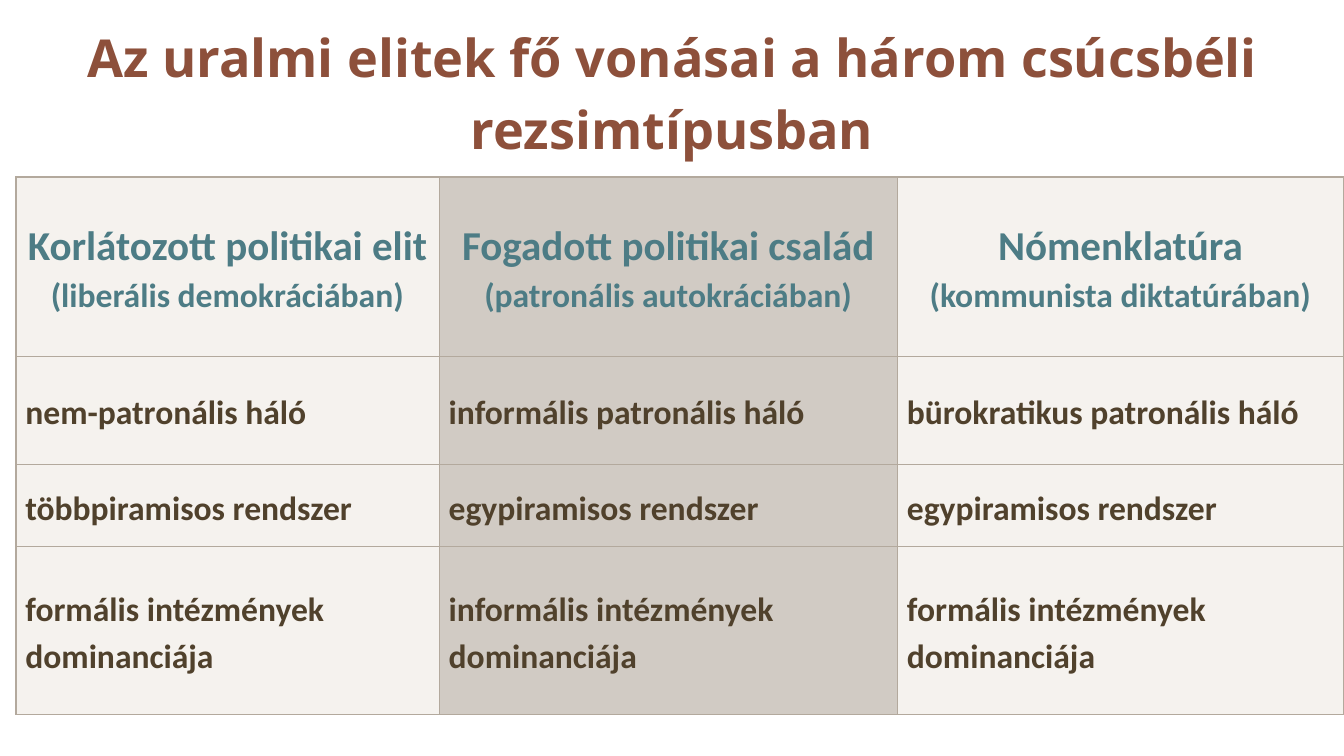
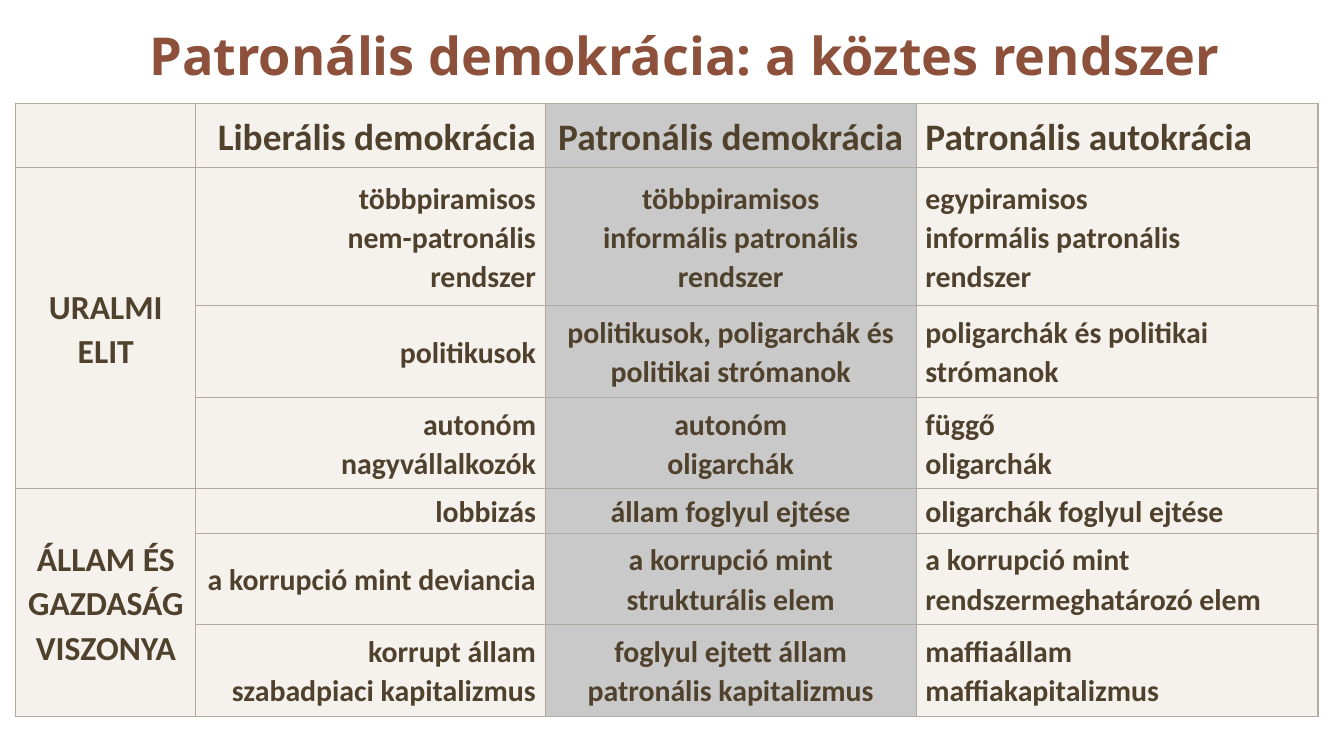
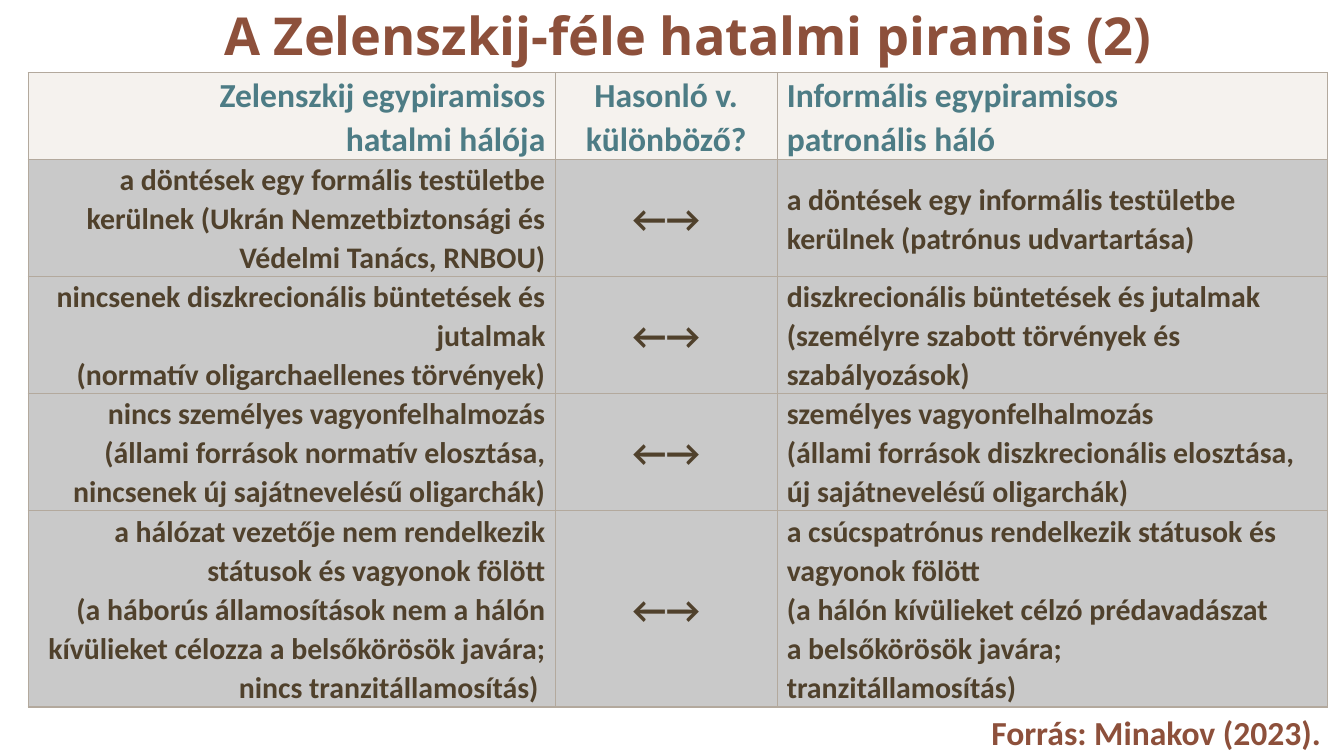
from copy import deepcopy
from dataclasses import dataclass

from lxml import etree
from pptx import Presentation
from pptx.dml.color import RGBColor
from pptx.enum.text import MSO_ANCHOR, PP_ALIGN
from pptx.oxml.ns import qn
from pptx.util import Cm, Pt

LEFT, MID, RIGHT, EVEN = (PP_ALIGN.LEFT, PP_ALIGN.CENTER, PP_ALIGN.RIGHT,
                          PP_ALIGN.JUSTIFY)
CENTER, TOP = MSO_ANCHOR.MIDDLE, MSO_ANCHOR.TOP


@dataclass(frozen=True)
class Theme:
    head: str = "Open Sans"
    body: str = "Calibri"
    rust: str = "8D503B"
    teal: str = "4D7C85"
    brown: str = "50412C"
    sand: str = "EFEAE4"
    taupe: str = "B3A99D"
    gray: str = "A6A6A6"
    title: int = 28
    large: int = 22
    big: int = 20
    mid: int = 18
    small: int = 16
    thin: float = 0.5
    thick: float = 1
    alpha: int = 60


T = Theme()


def apply(target, values):
    for name, value in values.items():
        setattr(target, name, value)


def write(frame, parts, sizes, color, font, para):
    """Fill a frame, one paragraph per part; a newline in a part is a line break."""
    for i, part in enumerate(parts):
        line = frame.paragraphs[0] if i == 0 else frame.add_paragraph()
        line.text = part
        apply(line, para)
        for run in line.runs:
            apply(run.font, {"name": font, "size": Pt(sizes[min(i, len(sizes) - 1)]),
                             "bold": True})
            run.font.color.rgb = RGBColor.from_string(color)
        for stop in line._p.findall(qn("a:br")):
            stop.insert(0, deepcopy(line.runs[0]._r.rPr))


def label(slide, box, text, size, font, para, anchor):
    frame = slide.shapes.add_textbox(*map(Cm, box)).text_frame
    apply(frame, {"word_wrap": True, "vertical_anchor": anchor})
    write(frame, [text], [size], T.rust, font, para)


def title(slide, box, text, space=1.0):
    label(slide, box, text, T.title, T.head,
          {"alignment": MID, "line_spacing": space}, CENTER)


def source(slide, box, text):
    label(slide, box, text, T.mid, T.body, {"alignment": RIGHT}, TOP)


def paint(cell, color):
    cell.fill.solid()
    cell.fill.fore_color.rgb = RGBColor.from_string(color)
    tone = cell._tc.tcPr.find(".//" + qn("a:srgbClr"))
    etree.SubElement(tone, qn("a:alpha"), val=str(T.alpha * 1000))


def frame_cell(cell, thick):
    """Draw the four borders; the sides named in thick are heavier."""
    for i, side in enumerate("LRTB"):
        width = T.thick if side in thick else T.thin
        line = etree.Element(qn("a:ln" + side), w=str(Pt(width)))
        fill = etree.SubElement(line, qn("a:solidFill"))
        etree.SubElement(fill, qn("a:srgbClr"), val=T.taupe)
        cell._tc.tcPr.insert(i, line)


def grid(slide, spot, cols, rows, data, look, heavy, spans=()):
    """Place a table; look(row, col) gives a cell's format, heavy its thick edges."""
    size = (sum(cols), sum(rows))
    table = slide.shapes.add_table(len(rows), len(cols),
                                   *map(Cm, spot + size)).table
    apply(table, {"first_row": False, "horz_banding": False})
    for col, width in zip(table.columns, cols):
        col.width = Cm(width)
    for row, height in zip(table.rows, rows):
        row.height = Cm(height)
    for r, texts in enumerate(data):
        for c, text in enumerate(texts):
            cell, form = table.cell(r, c), look(r, c)
            ends = {"L": c == 0, "T": r == 0, "R": c == len(cols) - 1,
                    "B": r == len(rows) - 1}
            pad = Cm(form.get("pad", 0.18))
            apply(cell, {"vertical_anchor": CENTER, "margin_left": pad,
                         "margin_right": pad, "margin_top": 0, "margin_bottom": 0})
            paint(cell, form["fill"])
            frame_cell(cell, [s for s in heavy if ends[s]])
            if text:
                write(cell.text_frame, text.split("|"), form["sizes"],
                      form["color"], T.body, form["para"])
    for first, last, col in spans:
        table.cell(first, col).merge(table.cell(last, col))


def elites(slide):
    def look(r, c):
        top = r == 0
        return {"fill": T.taupe if c == 1 else T.sand,
                "color": T.teal if top else T.brown,
                "sizes": [T.large, T.mid] if top else [T.mid],
                "para": {"alignment": MID if top else LEFT,
                         "line_spacing": 1.1 if top else 1.15}}

    title(slide, (0.3, 0.4, 24.8, 2.54),
          "Az uralmi elitek fő vonásai a három csúcsbéli rezsimtípusban", 1.15)
    data = [
        ["Korlátozott politikai elit|(liberális demokráciában)",
         "Fogadott politikai család|(patronális autokráciában)",
         "Nómenklatúra|(kommunista diktatúrában)"],
        ["nem-patronális háló", "informális patronális háló",
         "bürokratikus patronális háló"],
        ["többpiramisos rendszer", "egypiramisos rendszer", "egypiramisos rendszer"],
        ["formális intézmények dominanciája", "informális intézmények dominanciája",
         "formális intézmények dominanciája"],
    ]
    grid(slide, (0.3, 3.35), [8, 8.66, 8.43], [3.38, 2.05, 1.55, 3.18],
         data, look, "LTR")


def regimes(slide):
    def look(r, c):
        align = [MID, RIGHT, MID, EVEN if r == 0 else LEFT][c]
        size = T.big if r == 0 else T.mid if c == 0 else T.small
        return {"fill": T.gray if c == 2 else T.sand, "color": T.brown,
                "sizes": [size], "pad": 0.18 if c else 0.22,
                "para": {"alignment": align, "line_spacing": 1.08}}

    title(slide, (0.53, 0.53, 24.8, 1), "Patronális demokrácia: a köztes rendszer")
    data = [
        ["", "Liberális demokrácia", "Patronális demokrácia", "Patronális autokrácia"],
        ["URALMI ELIT", "többpiramisos|nem-patronális\nrendszer",
         "többpiramisos|informális patronális rendszer",
         "egypiramisos|informális patronális\nrendszer"],
        ["", "politikusok", "politikusok, poligarchák és politikai strómanok",
         "poligarchák és politikai strómanok"],
        ["", "autonóm|nagyvállalkozók", "autonóm|oligarchák", "függő|oligarchák"],
        ["ÁLLAM ÉS GAZDASÁG VISZONYA", "lobbizás", "állam foglyul ejtése",
         "oligarchák foglyul ejtése"],
        ["", "a korrupció mint deviancia", "a korrupció mint\nstrukturális elem",
         "a korrupció mint\nrendszermeghatározó elem"],
        ["", "korrupt állam|szabadpiaci kapitalizmus",
         "foglyul ejtett állam|patronális kapitalizmus",
         "maffiaállam|maffiakapitalizmus"],
    ]
    grid(slide, (0.3, 1.95), [3.4, 6.61, 7, 7.6],
         [1.22, 2.61, 1.73, 1.73, 0.84, 1.73, 1.73],
         data, look, "R", [(1, 3, 0), (4, 6, 0)])


def pyramid(slide):
    def look(r, c):
        top = r == 0
        size = T.mid if top else T.big if c == 1 else T.small
        return {"fill": T.sand if top else T.gray,
                "color": T.teal if top else T.brown, "sizes": [size],
                "para": {"alignment": [RIGHT, MID, LEFT][c], "line_spacing": 1.07,
                         "space_after": Pt(6)}}

    title(slide, (0.6, 0.15, 24.8, 1), "A Zelenszkij-féle hatalmi piramis (2)")
    pairs = [
        ("a döntések egy formális testületbe kerülnek "
         "(Ukrán Nemzetbiztonsági és Védelmi Tanács, RNBOU)",
         "a döntések egy informális testületbe kerülnek (patrónus udvartartása)"),
        ("nincsenek diszkrecionális büntetések és jutalmak\n"
         "(normatív oligarchaellenes törvények)",
         "diszkrecionális büntetések és jutalmak\n"
         "(személyre szabott törvények és szabályozások)"),
        ("nincs személyes vagyonfelhalmozás\n(állami források normatív elosztása, "
         "nincsenek új sajátnevelésű oligarchák)",
         "személyes vagyonfelhalmozás\n(állami források diszkrecionális elosztása, "
         "új sajátnevelésű oligarchák)"),
        ("a hálózat vezetője nem rendelkezik státusok és vagyonok fölött\n"
         "(a háborús államosítások nem a hálón kívülieket célozza a belsőkörösök "
         "javára;\nnincs tranzitállamosítás) ",
         "a csúcspatrónus rendelkezik státusok és vagyonok fölött\n"
         "(a hálón kívülieket célzó prédavadászat\na belsőkörösök javára;\n"
         "tranzitállamosítás)"),
    ]
    data = [["Zelenszkij egypiramisos\nhatalmi hálója", "Hasonló v. különböző?",
             "Informális egypiramisos\npatronális háló"]]
    data += [[ours, "←→", model] for ours, model in pairs]
    grid(slide, (0.53, 1.37), [9.96, 4.2, 10.4], [1.65] + [2.21] * 3 + [3.71],
         data, look, "RB")
    source(slide, (14.9, 13.34, 10.32, 1.02), "Forrás: Minakov (2023).")


def main():
    deck = Presentation()
    apply(deck, {"slide_width": Cm(25.4), "slide_height": Cm(14.29)})
    for build in (elites, regimes, pyramid):
        build(deck.slides.add_slide(deck.slide_layouts[6]))
    deck.save("out.pptx")


if __name__ == "__main__":
    main()
